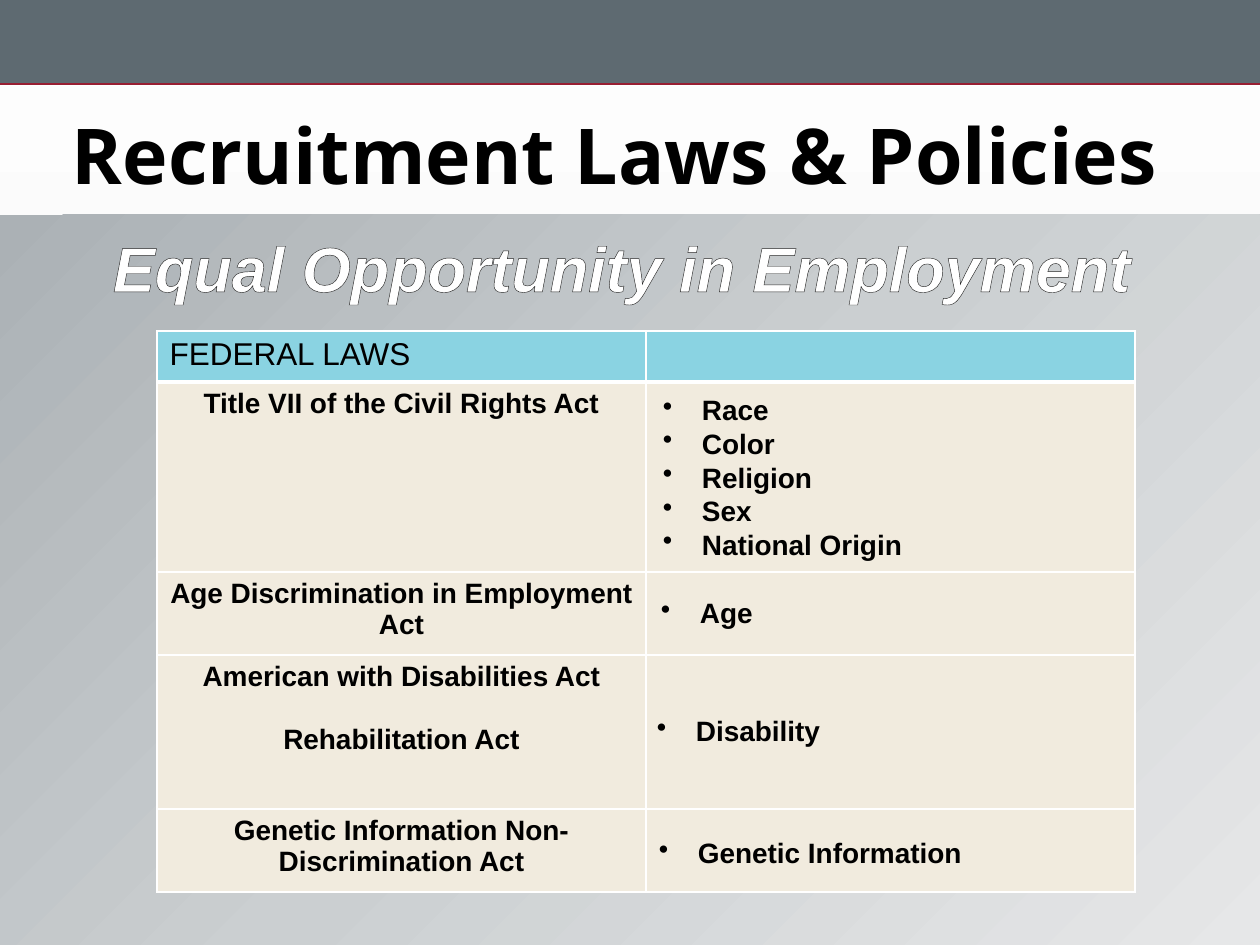
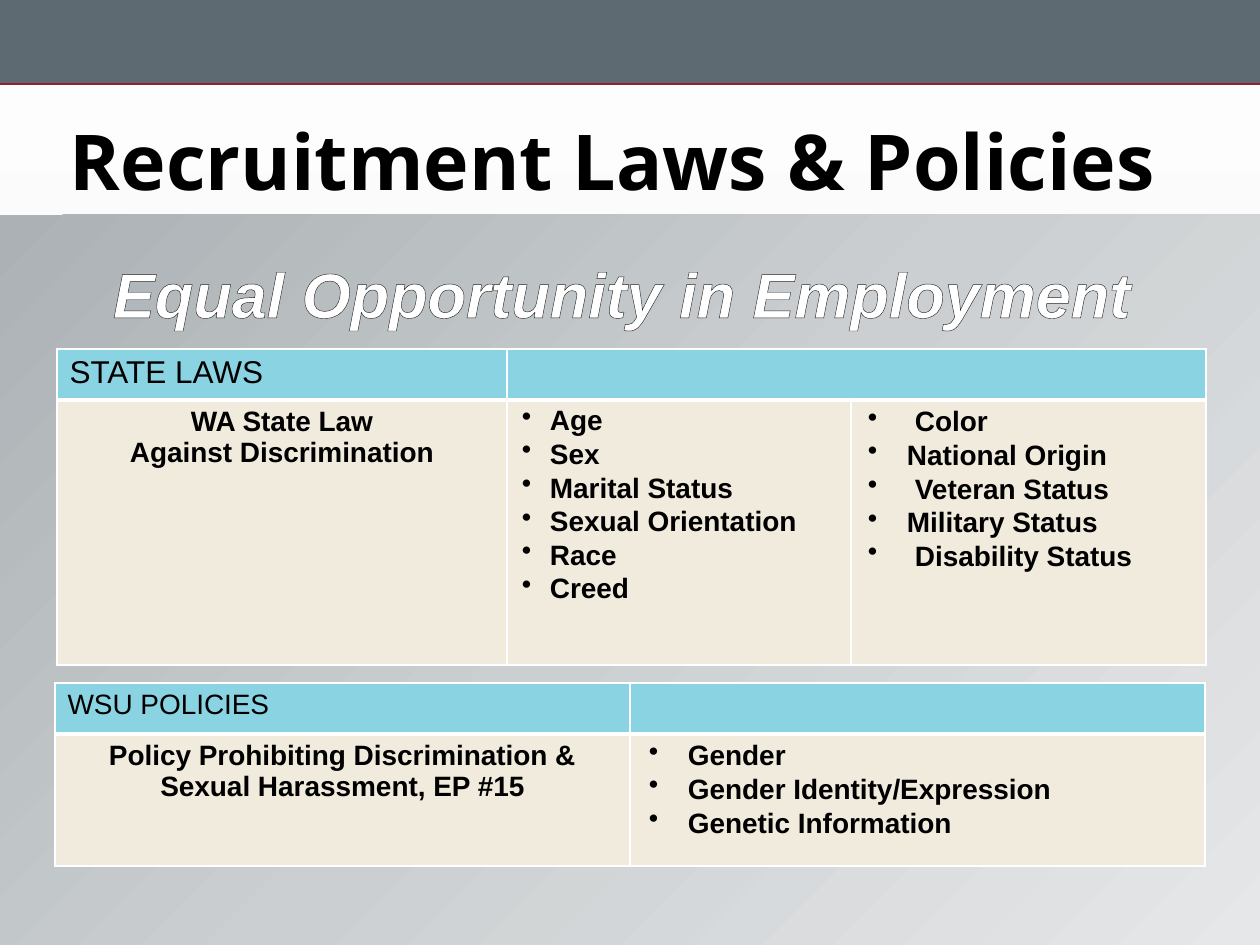
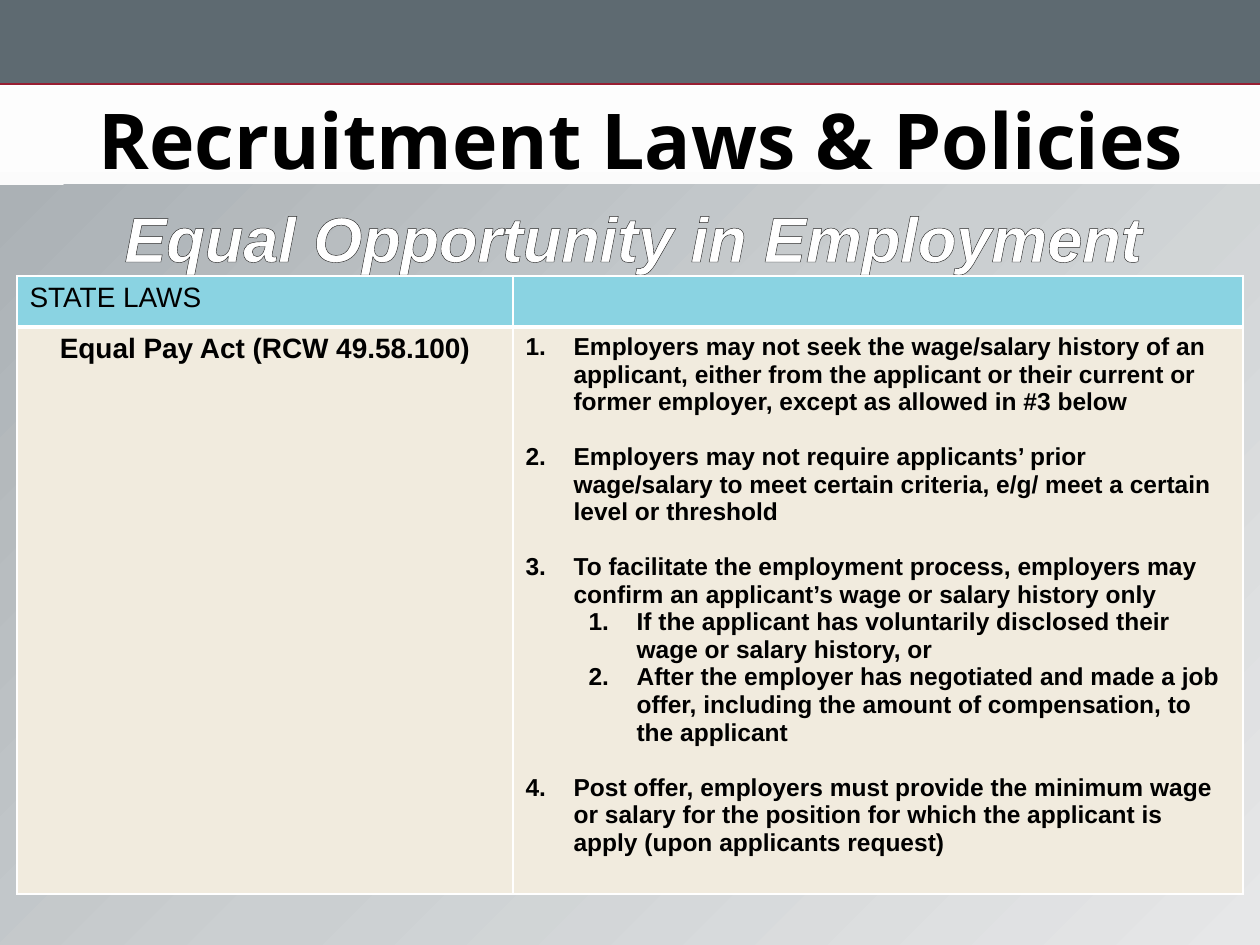
"""Build three slides on equal opportunity laws and policies."""
from itertools import cycle
from copy import deepcopy
from lxml import etree
from pptx import Presentation, util as u
from pptx.dml.color import RGBColor
from pptx.enum import shapes, text
from pptx.oxml.ns import qn

SCALE = 914400 / 126
INK, WHITE, SLATE, WINE = "000000", "FFFFFF", "5E6A71", "981E32"
HEAD, BODY, EDGE = "8AD3E2", "F1EBDE", "262626"
PAGE = [(0, "EAEAEA"), (100, "FFFFFF")]
PANEL = [(0, "ABB1B5"), (50, "CBCFD1"), (100, "E6E7E8")]
TITLE = "Recruitment Laws & Policies"
SUB = "Equal Opportunity in Employment "
MID, LEFT = text.PP_ALIGN.CENTER, text.PP_ALIGN.LEFT
BIG = {"size": 44, "name": "Open Sans", "bold": True, "color": INK}
ITAL = {"size": 36, "name": "Arial", "bold": True, "italic": True, "color": WHITE}
BOLD = {"size": 16, "name": "Arial", "bold": True, "color": INK}
SMALL = {**BOLD, "size": 14}

RULES = [
    (0, "Employers may not seek the wage/salary history of an applicant, either from the "
        "applicant or their current or former employer, except as allowed in #3 below"),
    (0, "Employers may not require applicants’ prior wage/salary to meet certain criteria, "
        "e/g/ meet a certain level or threshold"),
    (0, "To facilitate the employment process, employers may confirm an applicant’s wage "
        "or salary history only"),
    (1, "If the applicant has voluntarily disclosed their wage or salary history, or"),
    (1, "After the employer has negotiated and made a job offer, including the amount of "
        "compensation, to the applicant"),
    (0, "Post offer, employers must provide the minimum wage or salary for the position for "
        "which the applicant is apply (upon applicants request)"),
]

SLIDES = [
    {"title": (-81, 17, 1392, 183), "foot": 0, "panel": 215, "sub": (-258, 215, 1778, 89),
     "tables": [
         {"at": (157, 331), "cols": [489, 489], "rows": [50, 190, 83, 154, 83],
          "head": "FEDERAL LAWS", "size": 18, "gap": 18,
          "laws": [["Title VII of the Civil Rights Act"],
                   ["Age Discrimination in Employment Act"],
                   ["American with Disabilities Act", "Rehabilitation Act"],
                   ["Genetic Information Non-Discrimination Act"]]}],
     "lists": [
         ((650, 387, 630, 183), [39], ["Race", "Color", "Religion", "Sex", "National Origin"]),
         ((648, 590, 340, 47), [39], ["Age"]),
         ((644, 708, 340, 47), [39], ["Disability"]),
         ((646, 830, 340, 47), [39], ["Genetic Information"])]},
    {"title": (-83, 23, 1392, 183), "foot": 0, "panel": 215, "sub": (-258, 241, 1778, 89),
     "tables": [
         {"at": (57, 349), "cols": [450, 344, 355], "rows": [50, 265],
          "head": "STATE LAWS", "size": 18, "gap": 0,
          "laws": [["WA State Law", "Against Discrimination"]]},
         {"at": (55, 683), "cols": [575, 575], "rows": [48, 132],
          "head": "WSU POLICIES", "size": 16, "gap": 0,
          "laws": [["Policy Prohibiting Discrimination & Sexual Harassment, EP #15"]]}],
     "lists": [
         ((509, 397, 630, 217), [28],
          ["Age", "Sex", "Marital Status", "Sexual Orientation", "Race", "Creed"]),
         ((855, 398, 630, 183), [47, 39],
          ["Color", "National Origin", "Veteran Status", "Military Status",
           "Disability Status"]),
         ((636, 732, 630, 118), [39],
          ["Gender", "Gender Identity/Expression", "Genetic Information"])]},
    {"title": (0, -15, 1283, 251), "foot": 51, "panel": 185, "sub": (40, 185, 1192, 147),
     "tables": [
         {"at": (17, 276), "cols": [496, 730], "rows": [48, 567],
          "head": "STATE LAWS", "size": 16, "gap": 0,
          "laws": [["Equal Pay Act (RCW 49.58.100)"]], "rules": RULES}],
     "lists": []},
]


def px(num):
    """Turn pixels into EMU."""
    return u.Emu(round(num * SCALE))


def tint(code):
    """Turn a hex string into a colour."""
    return RGBColor.from_string(code)


def blend(fill, root, stops, turn):
    """Give a fill a linear gradient, turned clockwise in degrees."""
    fill.gradient()
    fill.gradient_angle = 360 - turn
    marks = list(root.iter(qn("a:gs")))
    for _ in stops[2:]:
        marks[0].addnext(deepcopy(marks[0]))
    for mark, (pos, code) in zip(fill.gradient_stops, stops):
        mark.position, mark.color.rgb = pos / 100, tint(code)


def write(par, words, form, align=LEFT, **gaps):
    """Fill a paragraph with one formatted run."""
    run = par.add_run()
    run.text = words
    for key, val in form.items():
        if key == "color":
            run.font.color.rgb = tint(val)
        else:
            setattr(run.font, key, u.Pt(val) if key == "size" else val)
    par.alignment = align
    for key, val in gaps.items():
        setattr(par, key, u.Pt(val))
    return run


def line(frame, num):
    """Return the first paragraph or a new one."""
    return frame.paragraphs[0] if num == 0 else frame.add_paragraph()


def mark(par, hang, left, tag, **attrs):
    """Set a hanging indent and a bullet or number."""
    props = par._p.get_or_add_pPr()
    props.set("marL", str(px(left)))
    props.set("indent", str(-px(hang)))
    etree.SubElement(props, qn(tag), attrs)


def setup(frame, sides, anchor=text.MSO_ANCHOR.TOP):
    """Set wrap, anchor and insets (left, top, right, bottom) of a frame."""
    form = {"word_wrap": True, "auto_size": text.MSO_AUTO_SIZE.NONE,
            "vertical_anchor": anchor}
    names = ("margin_left", "margin_top", "margin_right", "margin_bottom")
    form.update(zip(names, map(px, sides)))
    for key, val in form.items():
        setattr(frame, key, val)


def box(slide, at, sides=(13, 6, 13, 6)):
    """Add a text box and return its frame."""
    frame = slide.shapes.add_textbox(*map(px, at)).text_frame
    setup(frame, sides)
    return frame


def stroke(parent, tag, code, width, spot):
    """Insert a solid line element at a place in its parent."""
    node = etree.Element(qn(tag), w=str(u.Pt(width)))
    fill = etree.SubElement(node, qn("a:solidFill"))
    etree.SubElement(fill, qn("a:srgbClr"), val=code)
    parent.insert(spot, node)


def block(slide, at):
    """Add a plain rectangle without line or shadow."""
    rect = slide.shapes.add_shape(shapes.MSO_SHAPE.RECTANGLE, *map(px, at))
    rect.shadow.inherit = False
    rect.line.fill.background()
    return rect


def frame_page(slide, data):
    """Draw the band, rule, panel, title and subtitle."""
    band = block(slide, (0, 0, 1260, 84))
    band.fill.solid()
    band.fill.fore_color.rgb = tint(SLATE)
    rule = slide.shapes.add_connector(
        shapes.MSO_CONNECTOR.STRAIGHT, *map(px, (-3, 84, 1260, 84)))
    rule.line.color.rgb, rule.line.width = tint(WINE), u.Pt(1)
    etree.SubElement(rule._element.spPr, qn("a:effectLst"))
    top = data["panel"]
    panel = block(slide, (0, top, 1260, 945 - top))
    blend(panel.fill, panel._element, PANEL, 45)

    title = slide.shapes.title
    for key, val in zip(("left", "top", "width", "height"), data["title"]):
        setattr(title, key, px(val))
    setup(title.text_frame, (63, 6, 63, data["foot"]), text.MSO_ANCHOR.BOTTOM)
    write(title.text_frame.paragraphs[0], TITLE, BIG, MID)

    sub = box(slide, data["sub"], (13, 14, 0 if data["foot"] else 13, 6))
    run = write(sub.paragraphs[0], SUB, ITAL, MID)
    stroke(run.font._element, "a:ln", EDGE, 0.75, 0)


def add_grid(slide, data):
    """Add one table of laws."""
    cols, rows = data["cols"], data["rows"]
    spot = (*data["at"], sum(cols), sum(rows))
    grid = slide.shapes.add_table(len(rows), len(cols), *map(px, spot)).table
    grid.horz_banding = False
    for col, wide in zip(grid.columns, cols):
        col.width = px(wide)
    for row, high in zip(grid.rows, rows):
        row.height = px(high)
    for num, row in enumerate(grid.rows):
        for cell in row.cells:
            cell.fill.solid()
            cell.fill.fore_color.rgb = tint(BODY if num else HEAD)
            widths = (1, 1, 3 if num == 1 else 1, 1 if num else 3)
            for place, (side, width) in enumerate(zip("LRTB", widths)):
                stroke(cell._tc.tcPr, f"a:ln{side}", WHITE, width, place)
    if len(cols) > 2:
        grid.cell(0, 1).merge(grid.cell(0, 2))
    label = {**BOLD, "bold": False, "size": data["size"]}
    write(grid.cell(0, 0).text_frame.paragraphs[0], data["head"], label)
    for num, law in enumerate(data["laws"], 1):
        frame = grid.cell(num, 0).text_frame
        for idx, words in enumerate(law):
            write(line(frame, idx), words, BOLD, MID,
                  space_before=data["gap"] if idx else 0)
    for idx, (level, words) in enumerate(data.get("rules", [])):
        par = line(grid.cell(1, 1).text_frame, idx)
        write(par, words, SMALL, space_before=0 if level or not idx else 15.7)
        par.level = level
        mark(par, 48, 48 + 63 * level, "a:buAutoNum", type="arabicPeriod")


def add_list(slide, at, hangs, items):
    """Add one bulleted list."""
    frame = box(slide, at)
    for idx, (words, hang) in enumerate(zip(items, cycle(hangs))):
        par = line(frame, idx)
        write(par, words, BOLD, line_spacing=19.2)
        mark(par, hang, hang, "a:buChar", char="•")


def main():
    """Build and save the slides."""
    prs = Presentation()
    prs.slide_width, prs.slide_height = px(1260), px(945)
    master = prs.slide_master
    blend(master.background.fill, master._element, PAGE, 270)
    for data in SLIDES:
        slide = prs.slides.add_slide(prs.slide_layouts[5])
        frame_page(slide, data)
        for grid in data["tables"]:
            add_grid(slide, grid)
        for item in data["lists"]:
            add_list(slide, *item)
    prs.save("out.pptx")


if __name__ == "__main__":
    main()
